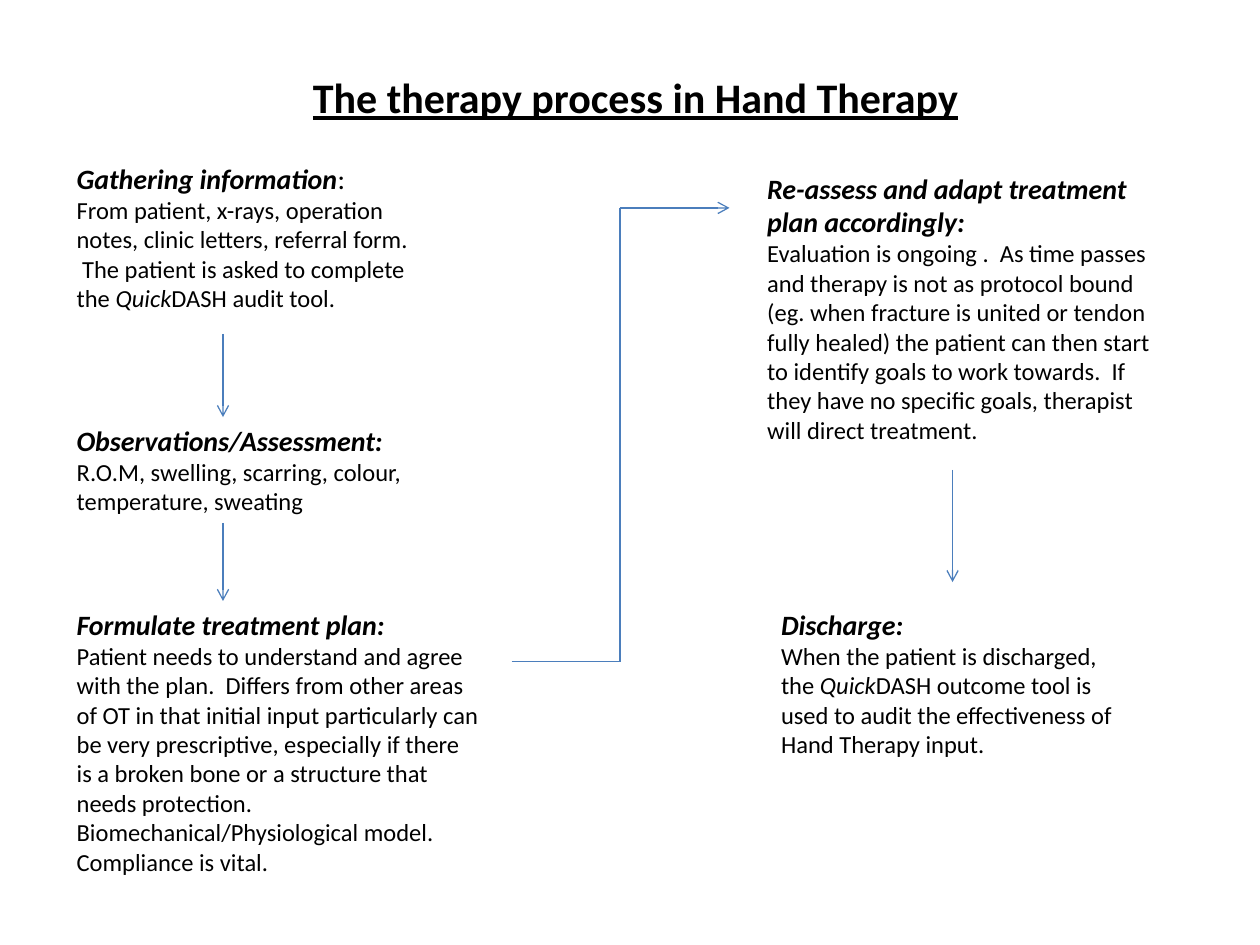
from dataclasses import dataclass

import pptx
import pptx.dml.color
import pptx.enum.shapes
import pptx.enum.text
import pptx.oxml
import pptx.oxml.ns
import pptx.util
from pptx.util import Inches

BLACK = pptx.dml.color.RGBColor(0x00, 0x00, 0x00)
ARROW_BLUE = pptx.dml.color.RGBColor(0x4B, 0x7E, 0xBC)
FONT = "Calibri"
LEFT_COLUMN = 0.51
LOWER_ROW = 4.77
LEFT_FLOW = 1.77
RIGHT_FLOW = 7.56


@dataclass(frozen=True)
class Span:
    text: str
    size: int = 14
    bold: bool = False
    italic: bool = False
    underline: bool = False


@dataclass(frozen=True)
class Stage:
    left: float
    top: float
    width: float
    height: float
    paragraphs: list[list[Span]]
    centred: bool = False


@dataclass(frozen=True)
class Flow:
    start: tuple[float, float]
    end: tuple[float, float]
    arrow: bool = True


def heading(text: str) -> Span:
    return Span(text, size=16, bold=True, italic=True)


def quick_dash(before: str, after: str) -> list[Span]:
    """Body sentence around the tool name, whose first half is italic."""
    return [Span(before), Span("Quick", italic=True), Span("DASH" + after)]


STAGES = [
    Stage(0.83, 0.52, 8.43, 0.5, [
        [Span("The therapy process in Hand Therapy", 24, bold=True, underline=True)],
    ], centred=True),
    Stage(LEFT_COLUMN, 1.23, 2.83, 1.31, [
        [heading("Gathering information"), Span(":", 16)],
        quick_dash(
            "From patient, x-rays, operation notes, clinic letters, referral form.  "
            "The patient is asked to complete the ",
            " audit tool."),
    ]),
    Stage(LEFT_COLUMN, 3.31, 3.84, 0.84, [
        [heading("Observations/Assessment:")],
        [Span("R.O.M, swelling, scarring, colour, temperature, sweating")],
    ]),
    Stage(LEFT_COLUMN, LOWER_ROW, 3.39, 2.86, [
        [heading("Formulate treatment plan:")],
        [Span("Patient needs to understand and agree with the plan.  Differs from "
              "other areas of OT in that initial input particularly can be very "
              "prescriptive, especially if there is a broken bone or a structure "
              "that needs protection.")],
        [Span("Biomechanical/Physiological model. Compliance is vital.")],
    ]),
    Stage(5.99, 1.31, 3.39, 2.29, [
        [heading("Re-assess and adapt treatment plan accordingly:")],
        [Span("Evaluation is ongoing .  As time passes and therapy is not as protocol "
              "bound (eg. when fracture is united or tendon fully healed) the patient "
              "can then start to identify goals to work towards.  If they have no "
              "specific goals, therapist will direct treatment.")],
    ]),
    Stage(6.1, LOWER_ROW, 2.91, 1.31, [
        [heading("Discharge:")],
        quick_dash(
            "When the patient is discharged, the ",
            " outcome tool is used to audit the effectiveness of Hand Therapy input."),
    ]),
]

FLOWS = [
    Flow((4.06, 5.25), (4.92, 5.25), arrow=False),
    Flow((4.92, 5.25), (4.92, 1.65), arrow=False),
    Flow((4.92, 1.65), (5.79, 1.65)),
    Flow((LEFT_FLOW, 2.65), (LEFT_FLOW, 3.31)),
    Flow((LEFT_FLOW, 4.15), (LEFT_FLOW, LOWER_ROW)),
    Flow((RIGHT_FLOW, 3.73), (RIGHT_FLOW, 4.62)),
]


def draw_stage(slide: pptx.slide.Slide, stage: Stage) -> None:
    box = slide.shapes.add_textbox(Inches(stage.left), Inches(stage.top),
                                   Inches(stage.width), Inches(stage.height))
    frame = box.text_frame
    frame.word_wrap = True
    frame.auto_size = pptx.enum.text.MSO_AUTO_SIZE.SHAPE_TO_FIT_TEXT
    for index, spans in enumerate(stage.paragraphs):
        paragraph = frame.add_paragraph() if index else frame.paragraphs[0]
        if stage.centred:
            paragraph.alignment = pptx.enum.text.PP_ALIGN.CENTER
        for span in spans:
            run = paragraph.add_run()
            run.text = span.text
            run.font.name = FONT
            run.font.size = pptx.util.Pt(span.size)
            run.font.bold = span.bold
            run.font.italic = span.italic
            run.font.underline = span.underline
            run.font.color.rgb = BLACK


def draw_flow(slide: pptx.slide.Slide, flow: Flow) -> None:
    connector = slide.shapes.add_connector(
        pptx.enum.shapes.MSO_CONNECTOR.STRAIGHT,
        *map(Inches, flow.start + flow.end))
    connector.line.color.rgb = ARROW_BLUE
    connector.line.width = pptx.util.Pt(0.75)
    if flow.arrow:
        tail = pptx.oxml.parse_xml(
            f'<a:tailEnd {pptx.oxml.ns.nsdecls("a")} type="arrow"/>')
        connector.line._get_or_add_ln().append(tail)
    no_shadow = pptx.oxml.parse_xml(f'<a:effectLst {pptx.oxml.ns.nsdecls("a")}/>')
    connector._element.spPr.append(no_shadow)


def main() -> None:
    presentation = pptx.Presentation()
    presentation.slide_width = Inches(10)
    presentation.slide_height = Inches(7.5)
    slide = presentation.slides.add_slide(presentation.slide_layouts[6])
    for stage in STAGES:
        draw_stage(slide, stage)
    for flow in FLOWS:
        draw_flow(slide, flow)
    presentation.save("out.pptx")


if __name__ == "__main__":
    main()
